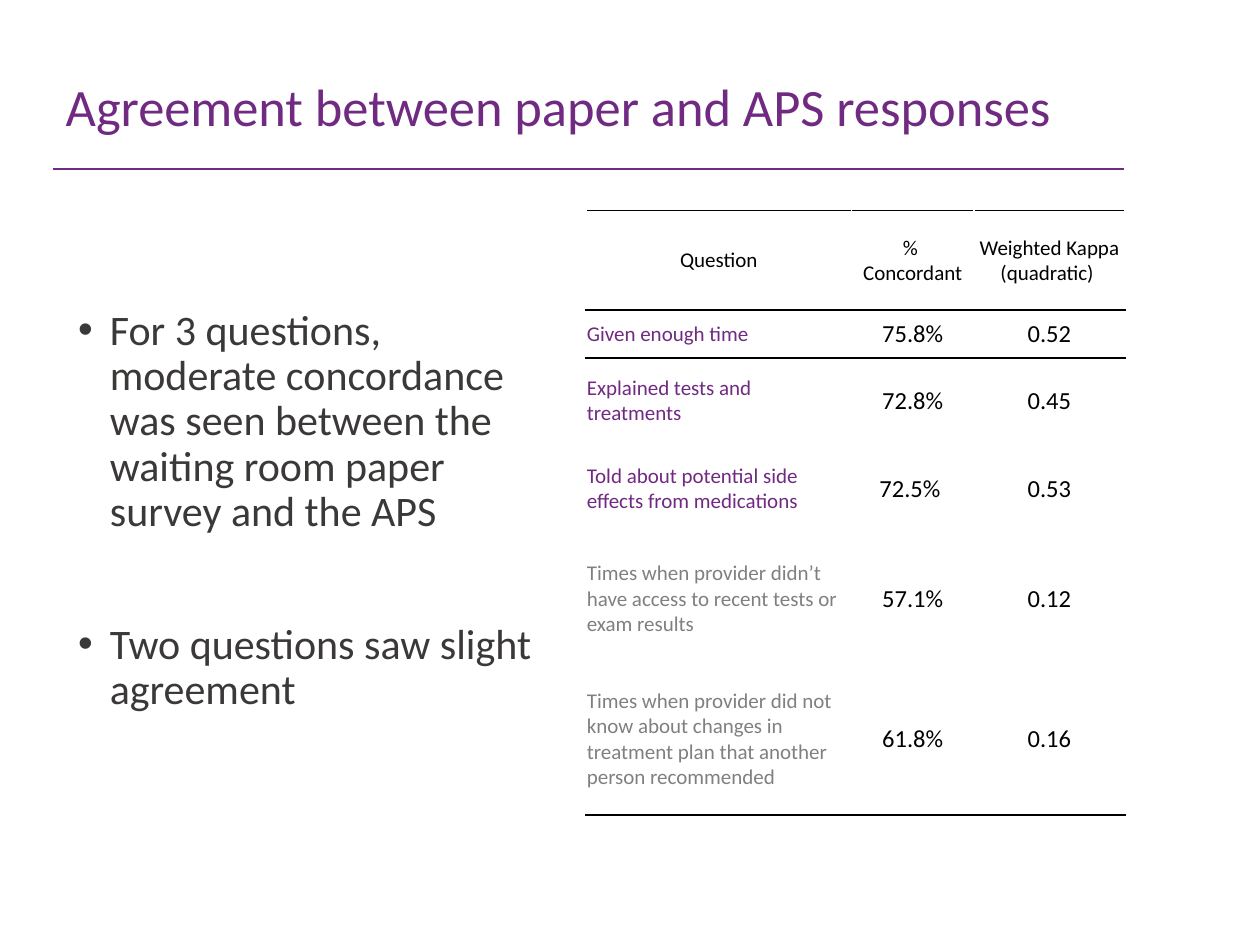
"""Build the slide on agreement between paper and APS responses."""
from lxml import etree
from pptx import Presentation
from pptx.dml.color import RGBColor
from pptx.enum.shapes import MSO_CONNECTOR
from pptx.enum.text import MSO_ANCHOR, MSO_AUTO_SIZE, PP_ALIGN
from pptx.oxml.ns import qn
from pptx.util import Cm, Pt

LEFT, CENTER = PP_ALIGN.LEFT, PP_ALIGN.CENTER
MIDDLE, TOP = MSO_ANCHOR.MIDDLE, MSO_ANCHOR.TOP
NO_AUTOFIT = MSO_AUTO_SIZE.NONE
STRAIGHT = MSO_CONNECTOR.STRAIGHT
COLORS = {"purple": "702A82", "text": "3B3838", "black": "000000", "gray": "808080"}


def add_text(paragraph, text, size, color, alignment=LEFT):
    paragraph.alignment = alignment
    run = paragraph.add_run()
    run.text = text
    run.font.name = "Calibri"
    run.font.size = Pt(size)
    run.font.bold = False
    run.font.color.rgb = RGBColor.from_string(COLORS[color])


def add_border(cell, tag, position):
    properties = cell._tc.get_or_add_tcPr()
    line = etree.Element(qn(tag), w=str(Pt(1)))
    fill = etree.SubElement(line, qn("a:solidFill"))
    etree.SubElement(fill, qn("a:srgbClr"), val=COLORS["black"])
    properties.insert(position, line)


presentation = Presentation()
presentation.slide_width = Cm(25.4)
presentation.slide_height = Cm(19.05)
slide = presentation.slides.add_slide(presentation.slide_layouts[1])

title = slide.shapes.title
title.left, title.top, title.width, title.height = Cm(1.07), Cm(1.07), Cm(23.37), Cm(2.29)
title.text_frame.auto_size = NO_AUTOFIT
title.text_frame.vertical_anchor = MIDDLE
title_paragraph = title.text_frame.paragraphs[0]
title_paragraph.line_spacing = 0.9
add_text(title_paragraph, "Agreement between paper and APS responses", 30, "purple")

rule = slide.shapes.add_connector(STRAIGHT, Cm(1.07), Cm(3.4), Cm(22.66), Cm(3.4))
rule.line.color.rgb = RGBColor.from_string(COLORS["purple"])
rule.line.width = Pt(1)
etree.SubElement(rule._element.spPr, qn("a:effectLst"))

body = slide.placeholders[1]
body.left, body.top, body.width, body.height = Cm(1.32), Cm(6.1), Cm(9.73), Cm(9.6)
body.text_frame.auto_size = NO_AUTOFIT
body.text_frame.vertical_anchor = TOP
bullets = [
    ("For 3 questions, moderate concordance was seen between the waiting room paper survey and the APS", 40),
    ("Two questions saw slight agreement", 12),
]
for index, (text, space_after) in enumerate(bullets):
    paragraph = body.text_frame.paragraphs[0] if index == 0 else body.text_frame.add_paragraph()
    paragraph.line_spacing = 0.9
    paragraph.space_before = Pt(10)
    paragraph.space_after = Pt(space_after)
    add_text(paragraph, text, 24, "text")
    properties = paragraph._p.get_or_add_pPr()
    properties.set("marL", str(Cm(0.64)))
    properties.set("indent", str(-Cm(0.64)))
    etree.SubElement(properties, qn("a:buFont"), typeface="Arial")
    etree.SubElement(properties, qn("a:buChar"), char="•")

rows = [
    (["Question"], ["% ", "Concordant"], ["Weighted Kappa (quadratic) "]),
    (["Given enough time"], ["75.8%"], ["0.52"]),
    (["Explained tests and treatments"], ["72.8%"], ["0.45"]),
    (["Told about potential side effects from medications"], ["72.5% "], ["0.53"]),
    (["Times when provider didn’t have access to recent tests or exam results"], ["57.1%"], ["0.12"]),
    (["Times when provider did not know about changes in treatment plan that another person recommended"],
     ["61.8%"], ["0.16"]),
]
row_heights = [2.01, 0.97, 1.7, 1.85, 2.59, 3.07]
column_widths = [5.36, 2.46, 3.05]
question_colors = ["black"] + ["purple"] * 3 + ["gray"] * 2
ruled_edges = {0, 1, 2, len(rows)}

table = slide.shapes.add_table(
    len(rows), len(column_widths), Cm(11.81), Cm(4.24), Cm(sum(column_widths)), Cm(sum(row_heights))
).table
table.first_row = False
table.horz_banding = False
for column, width in zip(table.columns, column_widths):
    column.width = Cm(width)

for row_index, (texts, height) in enumerate(zip(rows, row_heights)):
    table.rows[row_index].height = Cm(height)
    for column_index, lines in enumerate(texts):
        cell = table.cell(row_index, column_index)
        cell.fill.background()
        cell.vertical_anchor = MIDDLE
        cell.margin_left = cell.margin_right = cell.margin_top = Cm(0.02)
        cell.margin_bottom = 0
        is_header, is_question = row_index == 0, column_index == 0
        size = 12 if is_header or is_question else 14
        color = question_colors[row_index] if is_question else "black"
        alignment = LEFT if is_question and not is_header else CENTER
        for line_index, text in enumerate(lines):
            frame = cell.text_frame
            paragraph = frame.paragraphs[0] if line_index == 0 else frame.add_paragraph()
            add_text(paragraph, text, size, color, alignment)
        edges = [("a:lnT", row_index), ("a:lnB", row_index + 1)]
        ruled_tags = [tag for tag, edge in edges if edge in ruled_edges]
        for position, tag in enumerate(ruled_tags):
            add_border(cell, tag, position)

presentation.save("out.pptx")
